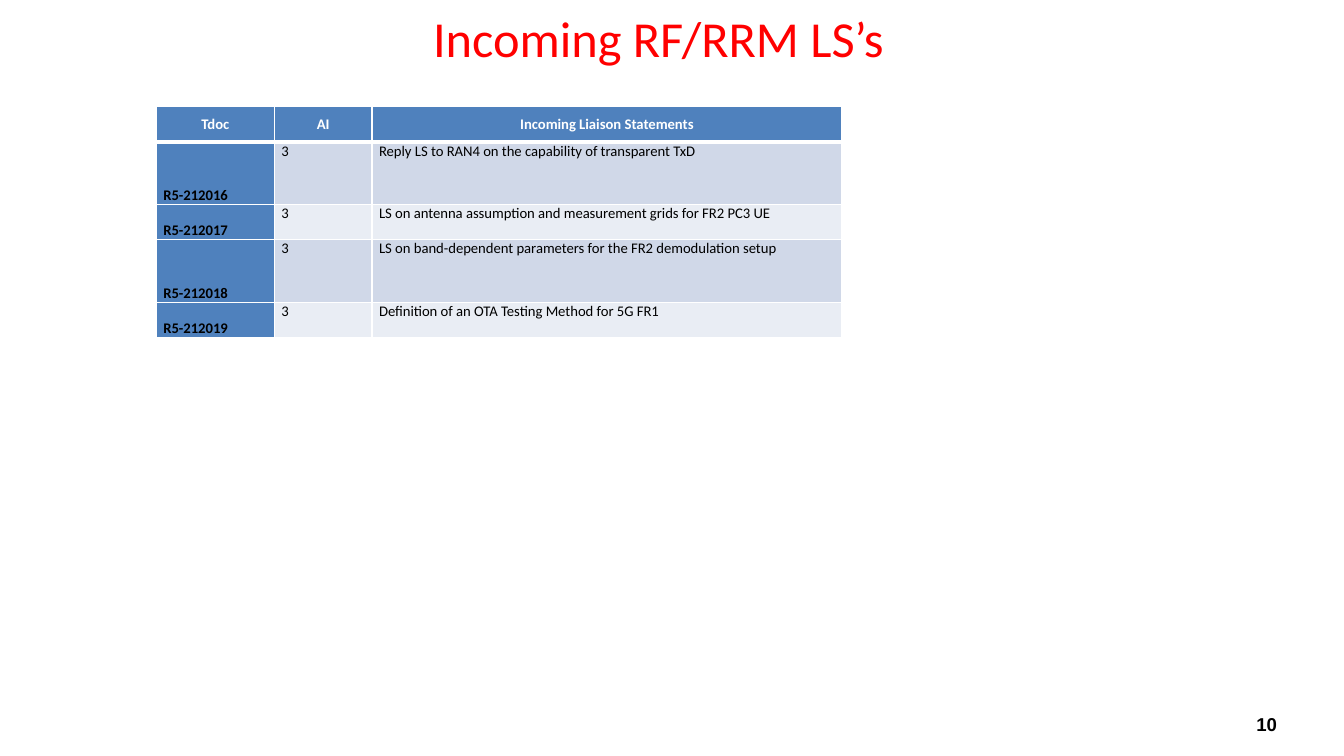
import pptx
import pptx.util
import pptx.dml.color
import pptx.enum.shapes
import pptx.enum.text
import pptx.oxml
from pptx.oxml.ns import nsdecls, qn

WIDTH, HEIGHT = 13.33, 7.5
HEADER_BLUE, WHITE, BLACK, RED = "4F81BD", "FFFFFF", "000000", "FF0000"
BANDS = ["D0D8E8", "E9EDF4"]
COLUMNS = [1.17, 0.97, 4.66]
HEADER_ROW, TALL_ROW, SHORT_ROW = 0.35, 0.62, 0.35

HEADINGS = ["Tdoc", "AI", "Incoming Liaison Statements"]
STATEMENTS = [
    ("R5-212016", "3", "Reply LS to RAN4 on the capability of transparent TxD"),
    ("R5-212017", "3", "LS on antenna assumption and measurement grids for FR2 PC3 UE"),
    ("R5-212018", "3", "LS on band-dependent parameters for the FR2 demodulation setup"),
    ("R5-212019", "3", "Definition of an OTA Testing Method for 5G FR1"),
]

ALIGN = pptx.enum.text.PP_ALIGN
ANCHOR = pptx.enum.text.MSO_ANCHOR
inches = pptx.util.Inches


def color(hex_text):
    return pptx.dml.color.RGBColor.from_string(hex_text)


def place(left, top, width, height):
    """Turn shares of the slide's size into lengths."""
    return (inches(WIDTH * left), inches(HEIGHT * top),
            inches(WIDTH * width), inches(HEIGHT * height))


def write(frame, text, size, ink, font="Calibri", bold=False, align=ALIGN.CENTER):
    paragraph = frame.paragraphs[0]
    paragraph.alignment = align
    run = paragraph.add_run()
    run.text = text
    run.font.size = pptx.util.Pt(size)
    run.font.name = font
    run.font.bold = bold
    run.font.color.rgb = color(ink)


def set_borders(cell, top, bottom):
    """Draw white cell borders; top and bottom are widths in points."""
    properties = cell._tc.get_or_add_tcPr()
    sides = {"lnL": 1, "lnR": 1, "lnT": top, "lnB": bottom}
    for position, (side, width) in enumerate(sides.items()):
        properties.insert(position, pptx.oxml.parse_xml(
            f'<a:{side} {nsdecls("a")} w="{pptx.util.Pt(width)}"><a:solidFill>'
            f'<a:srgbClr val="{WHITE}"/></a:solidFill></a:{side}>'))


def fill_cell(cell, text, fill, ink, bold, align, anchor, top=1, bottom=1):
    cell.margin_left = cell.margin_right = inches(0.07)
    cell.margin_top = cell.margin_bottom = 0
    cell.vertical_anchor = anchor
    cell.fill.solid()
    cell.fill.fore_color.rgb = color(fill)
    set_borders(cell, top, bottom)
    write(cell.text_frame, text, 10.5, ink, bold=bold, align=align)


def add_title(slide, text):
    title = slide.shapes.title
    title.left, title.top, title.width, title.height = place(0.04, 0.019, 0.9, 0.06)
    title.text_frame.vertical_anchor = ANCHOR.MIDDLE
    write(title.text_frame, text, 36, RED)


def add_statements(slide):
    heights = [HEADER_ROW] + [(TALL_ROW, SHORT_ROW)[i % 2] for i in range(len(STATEMENTS))]
    frame = slide.shapes.add_table(
        len(heights), len(COLUMNS),
        *place(0.1163, 0.1413, sum(COLUMNS) / WIDTH, sum(heights) / HEIGHT))
    table = frame.table
    for column, width in zip(table.columns, COLUMNS):
        column.width = inches(width)
    for row, height in zip(table.rows, heights):
        row.height = inches(height)

    # Heading row
    for column, heading in enumerate(HEADINGS):
        fill_cell(table.cell(0, column), heading, HEADER_BLUE, WHITE, True,
                  ALIGN.CENTER, ANCHOR.MIDDLE, bottom=3)

    # One banded row for each statement
    for row, statement in enumerate(STATEMENTS, start=1):
        for column, text in enumerate(statement):
            is_tdoc = column == 0
            fill_cell(table.cell(row, column), text,
                      HEADER_BLUE if is_tdoc else BANDS[(row - 1) % 2],
                      BLACK, is_tdoc, ALIGN.LEFT,
                      ANCHOR.BOTTOM if is_tdoc else ANCHOR.TOP,
                      top=3 if row == 1 else 1)


def add_page_number(slide, number):
    badge = slide.shapes.add_shape(pptx.enum.shapes.MSO_SHAPE.OVAL,
                                   *place(0.909, 0.928, 0.067, 0.061))
    badge.shadow.inherit = False
    badge.line.fill.background()
    badge.fill.solid()
    badge.fill.fore_color.rgb = color(WHITE)
    shade = badge.fill._xPr.find(qn("a:solidFill"))[0]
    shade.append(pptx.oxml.parse_xml(f'<a:alpha {nsdecls("a")} val="50000"/>'))
    frame = badge.text_frame
    frame.vertical_anchor = ANCHOR.MIDDLE
    write(frame, number, 13.3, BLACK, font="Arial", bold=True)


def main():
    deck = pptx.Presentation()
    deck.slide_width, deck.slide_height = inches(WIDTH), inches(HEIGHT)
    slide = deck.slides.add_slide(deck.slide_layouts[5])
    add_page_number(slide, "10")
    add_title(slide, "Incoming RF/RRM LS’s")
    add_statements(slide)
    deck.save("out.pptx")


if __name__ == "__main__":
    main()
